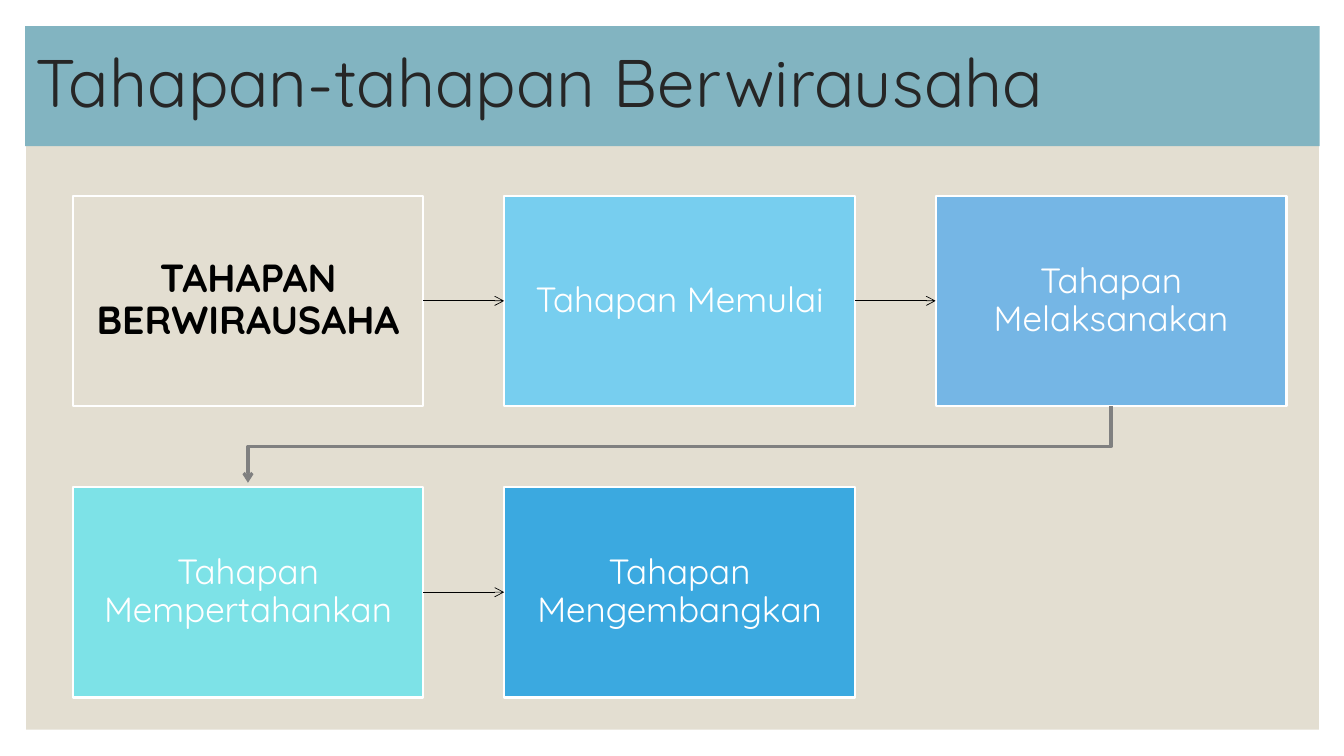
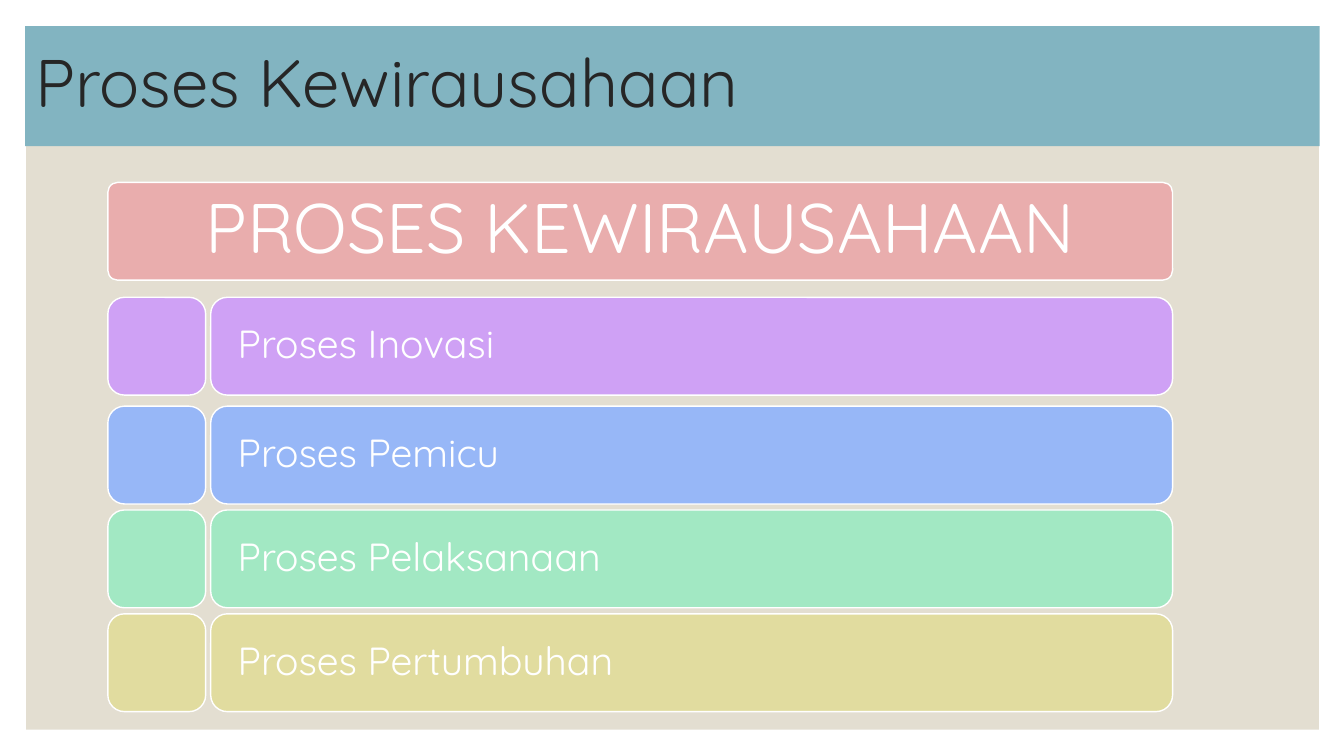
import pptx
import pptx.dml.color
import pptx.enum.shapes
import pptx.enum.text
import pptx.util
from lxml import etree
from pptx.oxml.ns import qn

Inches, Pt = pptx.util.Inches, pptx.util.Pt
SHAPE = pptx.enum.shapes.MSO_SHAPE
ALIGN = pptx.enum.text.PP_ALIGN

FONT = "Quicksand"
COLORS = {
    "panel": "E3DED1", "band": "82B4C1", "title": "262626",
    "white": "FFFFFF", "black": "000000", "gray": "808080",
    "sky": "77CEEF", "blue": "75B6E5", "aqua": "7DE2E7", "azure": "3BA9E0",
    "rose": "E9ADAD", "violet": "CFA1F5", "periwinkle": "97B7F7",
    "mint": "A2E8C3", "sand": "E1DC9F",
}

STAGES_TITLE = "Tahapan-tahapan Berwirausaha"
STAGES = [  # text, fill, size, text colour, bold
    ("TAHAPAN BERWIRAUSAHA", None, 28, "black", True),
    ("Tahapan Memulai", "sky", 25, "white", False),
    ("Tahapan Melaksanakan", "blue", 25, "white", False),
    ("Tahapan Mempertahankan", "aqua", 25, "white", False),
    ("Tahapan Mengembangkan", "azure", 25, "white", False),
]
COLUMNS = 3
STAGE_LEFT, STAGE_TOP = 0.72, 1.94
STAGE_W, STAGE_H = 3.48, 2.09
COLUMN_STEP, ROW_STEP = 4.28, 2.89
ARROW_GAP = 0.04

PROCESS_TITLE = "Proses Kewirausahaan"
PROCESS_HEADER = "PROSES KEWIRAUSAHAAN"
PROCESSES = [  # text, fill, top
    ("Proses Inovasi", "violet", 2.95),
    ("Proses Pemicu", "periwinkle", 4.03),
    ("Proses Pelaksanaan", "mint", 5.06),
    ("Proses Pertumbuhan", "sand", 6.09),
]
LIST_LEFT, LIST_W, TILE = 1.07, 10.56, 0.97
BAR_LEFT = 2.09
HEADER_TOP = 1.81


def rgb(name):
    return pptx.dml.color.RGBColor.from_string(COLORS[name])


def add_box(slide, at, fill=None, line_width=None, kind=SHAPE.RECTANGLE, radius=None):
    """Add a flat shape; a line width gives it a white outline."""
    sp = slide.shapes.add_shape(kind, *[Inches(v) for v in at])
    sp.shadow.inherit = False
    if radius is not None:
        sp.adjustments[0] = radius
    if fill:
        sp.fill.solid()
        sp.fill.fore_color.rgb = rgb(fill)
    else:
        sp.fill.background()
    if line_width:
        sp.line.color.rgb = rgb("white")
        sp.line.width = Pt(line_width)
    else:
        sp.line.fill.background()
    return sp


def write(sp, text, size, color="white", bold=False, align=ALIGN.LEFT, inset=0.1):
    tf = sp.text_frame
    tf.word_wrap = True
    tf.vertical_anchor = pptx.enum.text.MSO_ANCHOR.MIDDLE
    tf.margin_left = tf.margin_right = Inches(inset)
    p = tf.paragraphs[0]
    p.text = text
    p.alignment = align
    p.line_spacing = 0.9
    p.font.name = FONT
    p.font.size = Pt(size)
    p.font.bold = bold
    p.font.color.rgb = rgb(color)


def style_arrow(sp, color, width):
    sp.line.color.rgb = rgb(color)
    sp.line.width = Pt(width)
    ln = sp.line._get_or_add_ln()
    etree.SubElement(ln, qn("a:tailEnd")).set("type", "arrow")


def add_straight_arrow(slide, source, target):
    cxn = slide.shapes.add_connector(pptx.enum.shapes.MSO_CONNECTOR.STRAIGHT, 0, 0, 0, 0)
    cxn.begin_connect(source, 3)
    cxn.end_connect(target, 1)
    style_arrow(cxn, "black", 0.5)
    etree.SubElement(cxn._element.spPr, qn("a:effectLst"))


def add_return_arrow(slide, source, target):
    """Lead from the bottom of one box to the top of a box in the next row."""
    x1, x2 = (sp.left + sp.width // 2 for sp in (source, target))
    y1, y2 = source.top + source.height, target.top
    middle = (y1 + y2) // 2
    builder = slide.shapes.build_freeform(x1, y1)
    builder.add_line_segments(
        [(x1, middle), (x2, middle), (x2, y2 - Inches(ARROW_GAP))], close=False)
    sp = builder.convert_to_shape()
    sp.fill.background()
    sp.shadow.inherit = False
    style_arrow(sp, "gray", 2.25)


def add_titled_slide(prs, title):
    slide = prs.slides.add_slide(prs.slide_layouts[6])
    add_box(slide, (0.26, 0.26, 12.82, 6.98), "panel")
    write(add_box(slide, (0.25, 0.26, 12.84, 1.19), "band"), title, 48, "title")
    return slide


def build_stages(prs):
    slide = add_titled_slide(prs, STAGES_TITLE)
    boxes = []
    for i, (text, fill, size, color, bold) in enumerate(STAGES):
        row, column = divmod(i, COLUMNS)
        at = (STAGE_LEFT + column * COLUMN_STEP, STAGE_TOP + row * ROW_STEP,
              STAGE_W, STAGE_H)
        sp = add_box(slide, at, fill, 1.5)
        write(sp, text, size, color, bold, ALIGN.CENTER, 0.2)
        boxes.append(sp)
    for source, target in zip(boxes, boxes[1:]):
        same_row = source.top == target.top
        (add_straight_arrow if same_row else add_return_arrow)(slide, source, target)


def build_processes(prs):
    slide = add_titled_slide(prs, PROCESS_TITLE)
    rounded = SHAPE.ROUNDED_RECTANGLE
    header = add_box(slide, (LIST_LEFT, HEADER_TOP, LIST_W, TILE), "rose", 1, rounded, 0.1)
    write(header, PROCESS_HEADER, 50, align=ALIGN.CENTER)
    bar_width = LIST_LEFT + LIST_W - BAR_LEFT
    for text, fill, top in PROCESSES:
        add_box(slide, (LIST_LEFT, top, TILE, TILE), fill, 1, rounded, 0.17)
        bar = add_box(slide, (BAR_LEFT, top, bar_width, TILE), fill, 1, rounded, 0.17)
        write(bar, text, 28, inset=0.22)


def main():
    prs = pptx.Presentation()
    prs.slide_width, prs.slide_height = Inches(13.33), Inches(7.5)
    build_stages(prs)
    build_processes(prs)
    prs.save("out.pptx")


if __name__ == "__main__":
    main()
